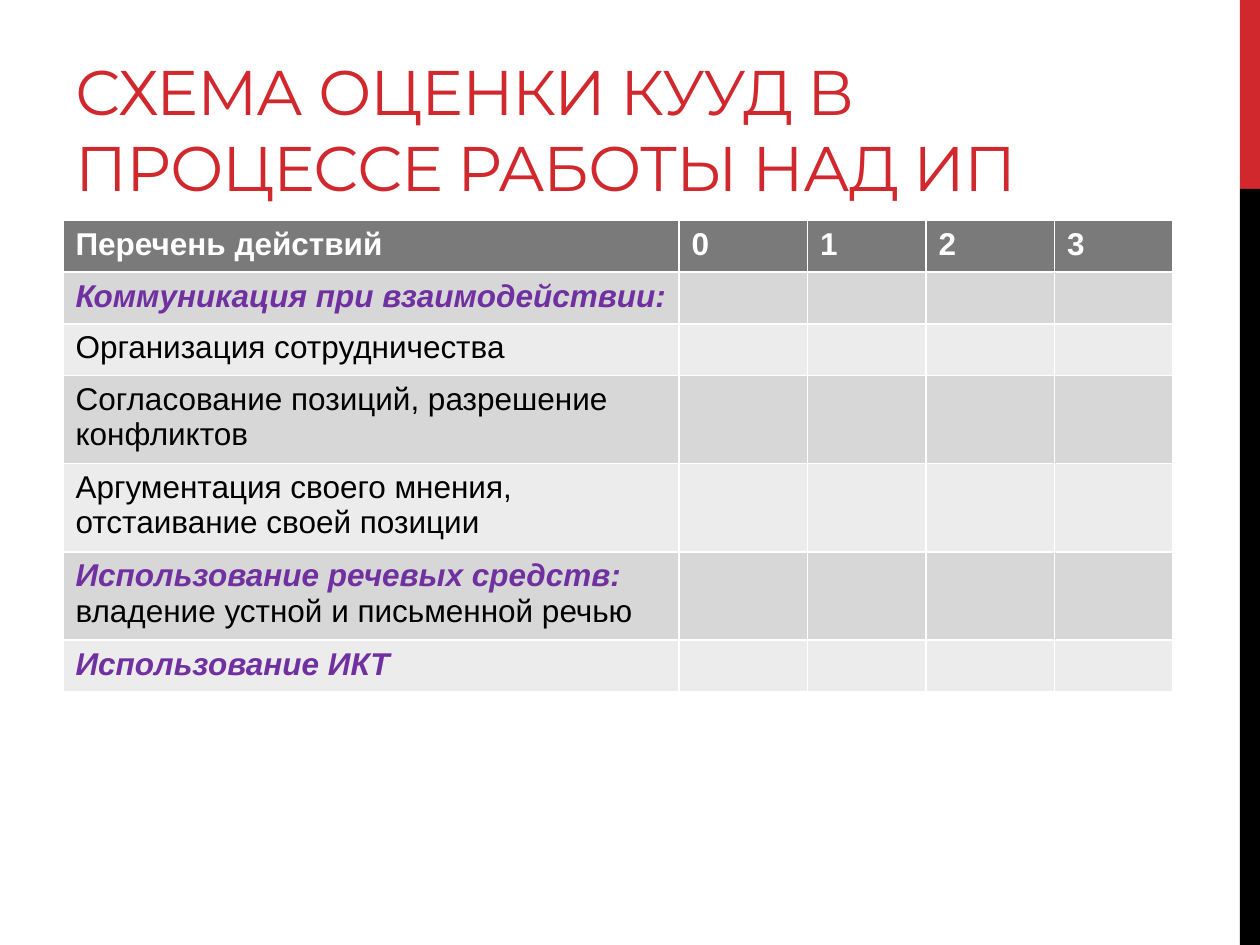
import pptx
import pptx.dml.color
import pptx.enum.shapes
import pptx.enum.text
import pptx.util

Inches = pptx.util.Inches
RGBColor = pptx.dml.color.RGBColor

RED = RGBColor(0xD1, 0x28, 0x2E)
BLACK = RGBColor(0x00, 0x00, 0x00)
WHITE = RGBColor(0xFF, 0xFF, 0xFF)
PURPLE = RGBColor(0x70, 0x30, 0xA0)
HEADER_GRAY = RGBColor(0x7A, 0x7A, 0x7A)
DARK_BAND = RGBColor(0xD7, 0xD7, 0xD7)
LIGHT_BAND = RGBColor(0xEC, 0xEC, 0xEC)

HEADERS = ["Перечень действий", "0", "1", "2", "3"]
ACTIONS = [
    ("Коммуникация при взаимодействии:", ""),
    ("", "Организация сотрудничества"),
    ("", "Согласование позиций, разрешение конфликтов"),
    ("", "Аргументация своего мнения, отстаивание своей позиции"),
    ("Использование речевых средств: ", "владение устной и письменной речью"),
    ("Использование ИКТ", ""),
]
COLUMN_WIDTHS = [4.89, 1.02, 0.94, 1.02, 0.94]
ROW_HEIGHT = 0.41


def add_span(para, text, color, bold, italic):
    span = para.add_run()
    span.text = text
    span.font.name = "Arial"
    span.font.size = pptx.util.Pt(18)
    span.font.color.rgb = color
    span.font.bold = bold
    span.font.italic = italic


deck = pptx.Presentation()
deck.slide_width = Inches(10)
deck.slide_height = Inches(7.5)
page = deck.slides.add_slide(deck.slide_layouts[6])

for top, height, color in [(0, 1.5, RED), (1.5, 6, BLACK)]:
    bar = page.shapes.add_shape(
        pptx.enum.shapes.MSO_SHAPE.RECTANGLE,
        Inches(9.84), Inches(top), Inches(0.16), Inches(height))
    bar.shadow.inherit = False
    bar.fill.solid()
    bar.fill.fore_color.rgb = color
    bar.line.fill.background()

title_box = page.shapes.add_textbox(Inches(0.5), Inches(0.17), Inches(8.91), Inches(1.5))
title_frame = title_box.text_frame
title_frame.word_wrap = True
title_frame.vertical_anchor = pptx.enum.text.MSO_ANCHOR.BOTTOM
title_frame.text = "СХЕМА ОЦЕНКИ КУУД В ПРОЦЕССЕ РАБОТЫ НАД ИП"
title_font = title_frame.paragraphs[0].runs[0].font
title_font.name = "Montserrat"
title_font.size = pptx.util.Pt(36)
title_font.color.rgb = RED
title_frame.paragraphs[0].runs[0]._r.get_or_add_rPr().set("spc", "-60")

row_count = len(ACTIONS) + 1
table = page.shapes.add_table(
    row_count, len(HEADERS), Inches(0.5), Inches(1.75),
    Inches(sum(COLUMN_WIDTHS)), Inches(ROW_HEIGHT * row_count)).table
for column, width in zip(table.columns, COLUMN_WIDTHS):
    column.width = Inches(width)

for index, row in enumerate(table.rows):
    row.height = Inches(ROW_HEIGHT)
    band = HEADER_GRAY if index == 0 else DARK_BAND if index % 2 else LIGHT_BAND
    for cell in row.cells:
        cell.fill.solid()
        cell.fill.fore_color.rgb = band

for column_index, header in enumerate(HEADERS):
    para = table.cell(0, column_index).text_frame.paragraphs[0]
    add_span(para, header, WHITE, True, False)

for row_index, (heading, detail) in enumerate(ACTIONS, start=1):
    para = table.cell(row_index, 0).text_frame.paragraphs[0]
    if heading:
        add_span(para, heading, PURPLE, True, True)
    if detail:
        add_span(para, detail, BLACK, False, False)

deck.save("out.pptx")
